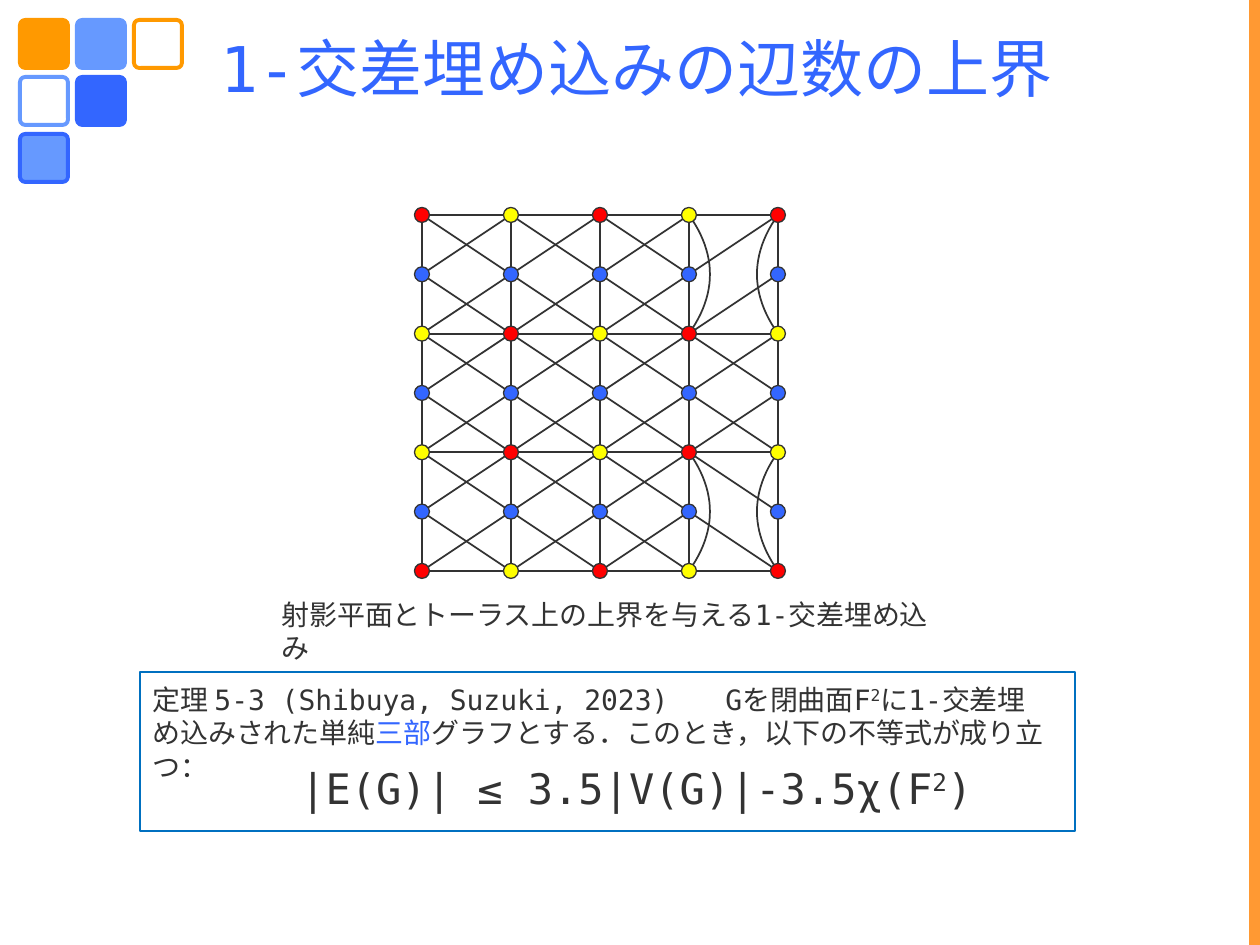
from lxml import etree
from pptx import Presentation
from pptx.dml.color import RGBColor
from pptx.enum.shapes import MSO_CONNECTOR, MSO_SHAPE
from pptx.enum.text import MSO_ANCHOR, PP_ALIGN
from pptx.oxml.ns import qn
from pptx.util import Inches, Pt

RECT, ROUND, OVAL = MSO_SHAPE.RECTANGLE, MSO_SHAPE.ROUNDED_RECTANGLE, MSO_SHAPE.OVAL
STRAIGHT = MSO_CONNECTOR.STRAIGHT
LEFT, TOP, MIDDLE = PP_ALIGN.LEFT, MSO_ANCHOR.TOP, MSO_ANCHOR.MIDDLE

SCALE = 914400 / 126
FONT = "DejaVu Sans Mono"
COLORS = {
    "ink": "333333", "blue": "3366FF", "sky": "6699FF", "orange": "FF9900",
    "stripe": "FF9933", "white": "FFFFFF", "red": "FF0000", "yellow": "FFFF00",
    "frame": "0070C0",
}

TITLE = [("1-交差埋め込みの辺数の上界", {"color": "blue"})]
CAPTION = [("射影平面とトーラス上の上界を与える1-交差埋め込み", {})]
THEOREM = [
    ("定理 5-3 (Shibuya, Suzuki, 2023)\tGを閉曲面F", {}),
    ("2", {"super": True}),
    ("に1-交差埋め込みされた単純", {}),
    ("三部", {"color": "blue"}),
    ("グラフとする．このとき，以下の不等式が成り立つ：", {}),
]
FORMULA = [("|E(G)| ≤ 3.5|V(G)|-3.5χ(F", {}), ("2", {"super": True}), (")", {})]

SQUARES = [
    (0, 0, "orange", "orange"), (1, 0, "sky", "sky"), (2, 0, "white", "orange"),
    (0, 1, "white", "sky"), (1, 1, "blue", "blue"), (0, 2, "sky", "blue"),
]
SQUARE, SQUARE_START, SQUARE_STEP = 48, 20, 57

VERTICES = ["RYRYR", "BBBBB", "YRYRY", "BBBBB", "YRYRY", "BBBBB", "RYRYR"]
VERTEX_COLORS = {"R": "red", "B": "blue", "Y": "yellow"}
GRID_LEFT, GRID_TOP, GRID_SIZE, DOT = 422, 215, 356, 15
COLS, ROWS = len(VERTICES[0]) - 1, len(VERTICES) - 1
EDGES = [
    ((1, 0), (1, 6)), ((2, 0), (2, 6)), ((3, 0), (3, 6)),
    ((0, 2), (4, 2)), ((0, 4), (4, 4)),
    ((0, 1), (1, 0)), ((0, 2), (2, 0)), ((0, 3), (3, 0)), ((0, 4), (4, 0)),
    ((0, 5), (4, 1)), ((0, 6), (4, 2)), ((1, 6), (4, 3)), ((2, 6), (3, 5)),
    ((2, 0), (3, 1)), ((1, 0), (4, 3)), ((0, 0), (4, 4)), ((0, 1), (4, 5)),
    ((0, 2), (4, 6)), ((0, 3), (3, 6)), ((0, 4), (2, 6)), ((0, 5), (1, 6)),
]
ARCS = [(3, 0, 1), (3, 4, 1), (4, 0, -1), (4, 4, -1)]
BULGE, ARC_STEPS = 21, 24


def px(*values):
    return [round(v * SCALE) for v in values]


def rgb(name):
    return RGBColor.from_string(COLORS[name])


def style(sp, fill, line, width):
    sp.shadow.inherit = False
    if fill:
        sp.fill.solid()
        sp.fill.fore_color.rgb = rgb(fill)
    else:
        sp.fill.background()
    sp.line.color.rgb = rgb(line)
    sp.line.width = Pt(width)


def add_shape(s, kind, box, fill, line, width):
    sp = s.shapes.add_shape(kind, *px(*box))
    style(sp, fill, line, width)
    return sp


def write(sp, runs, size, anchor=TOP, indent=0, tab=0):
    tf = sp.text_frame
    for name, value in {"word_wrap": True, "vertical_anchor": anchor}.items():
        setattr(tf, name, value)
    p = tf.paragraphs[0]
    p.alignment = LEFT
    pPr = p._p.get_or_add_pPr()
    if indent:
        pPr.set("marL", str(px(indent)[0]))
    if tab:
        tabs = etree.SubElement(pPr, qn("a:tabLst"))
        etree.SubElement(tabs, qn("a:tab"), pos=str(px(tab)[0]), algn="l")
    for text, fmt in runs:
        r = p.add_run()
        r.text = text
        for name, value in {"name": FONT, "size": Pt(size)}.items():
            setattr(r.font, name, value)
        r.font.color.rgb = rgb(fmt.get("color", "ink"))
        if fmt.get("super"):
            r._r.get_or_add_rPr().set("baseline", "30000")


def grid(col, row):
    return GRID_LEFT + GRID_SIZE * col / COLS, GRID_TOP + GRID_SIZE * row / ROWS


def add_edge(s, start, end):
    line = s.shapes.add_connector(STRAIGHT, *px(*grid(*start), *grid(*end)))
    line.line.color.rgb = rgb("ink")
    line.line.width = Pt(1)
    etree.SubElement(line._element.spPr, qn("a:effectLst"))


def add_arc(s, col, row, side):
    points = []
    for i in range(ARC_STEPS + 1):
        t = i / ARC_STEPS
        x, y = grid(col, row + 2 * t)
        points.append(px(x + side * BULGE * 4 * t * (1 - t), y))
    builder = s.shapes.build_freeform(*points[0])
    builder.add_line_segments(points[1:], close=False)
    style(builder.convert_to_shape(), None, "ink", 1)


def add_graph(s):
    for arc in ARCS:
        add_arc(s, *arc)
    add_shape(s, RECT, (GRID_LEFT, GRID_TOP, GRID_SIZE, GRID_SIZE), None, "ink", 1)
    for start, end in EDGES:
        add_edge(s, start, end)
    for row, codes in enumerate(VERTICES):
        for col, code in enumerate(codes):
            x, y = grid(col, row)
            box = (x - DOT / 2, y - DOT / 2, DOT, DOT)
            add_shape(s, OVAL, box, VERTEX_COLORS[code], "ink", 0.75)


def main():
    prs = Presentation()
    prs.slide_width, prs.slide_height = Inches(10), Inches(7.5)
    s = prs.slides.add_slide(prs.slide_layouts[5])

    for col, row, fill, line in SQUARES:
        x, y = (SQUARE_START + SQUARE_STEP * n for n in (col, row))
        sp = add_shape(s, ROUND, (x, y, SQUARE, SQUARE), fill, line, 2.25)
        sp.adjustments[0] = 0.11
    add_shape(s, RECT, (1250, 0, 10, 945), "stripe", "stripe", 0.75)

    title = s.shapes.title
    title.left, title.top, title.width, title.height = px(208, 23, 1012, 89)
    write(title, TITLE, 36, anchor=MIDDLE)

    add_graph(s)
    add_shape(s, RECT, (140, 672, 935, 159), None, "frame", 1)
    for box, runs, size, layout in [
        ((269, 591, 678, 47), CAPTION, 16, {}),
        ((140, 676, 924, 81), THEOREM, 16, {"tab": 573}),
        ((263, 756, 745, 63), FORMULA, 24, {"indent": 25}),
    ]:
        write(s.shapes.add_textbox(*px(*box)), runs, size, **layout)

    prs.save("out.pptx")


if __name__ == "__main__":
    main()
